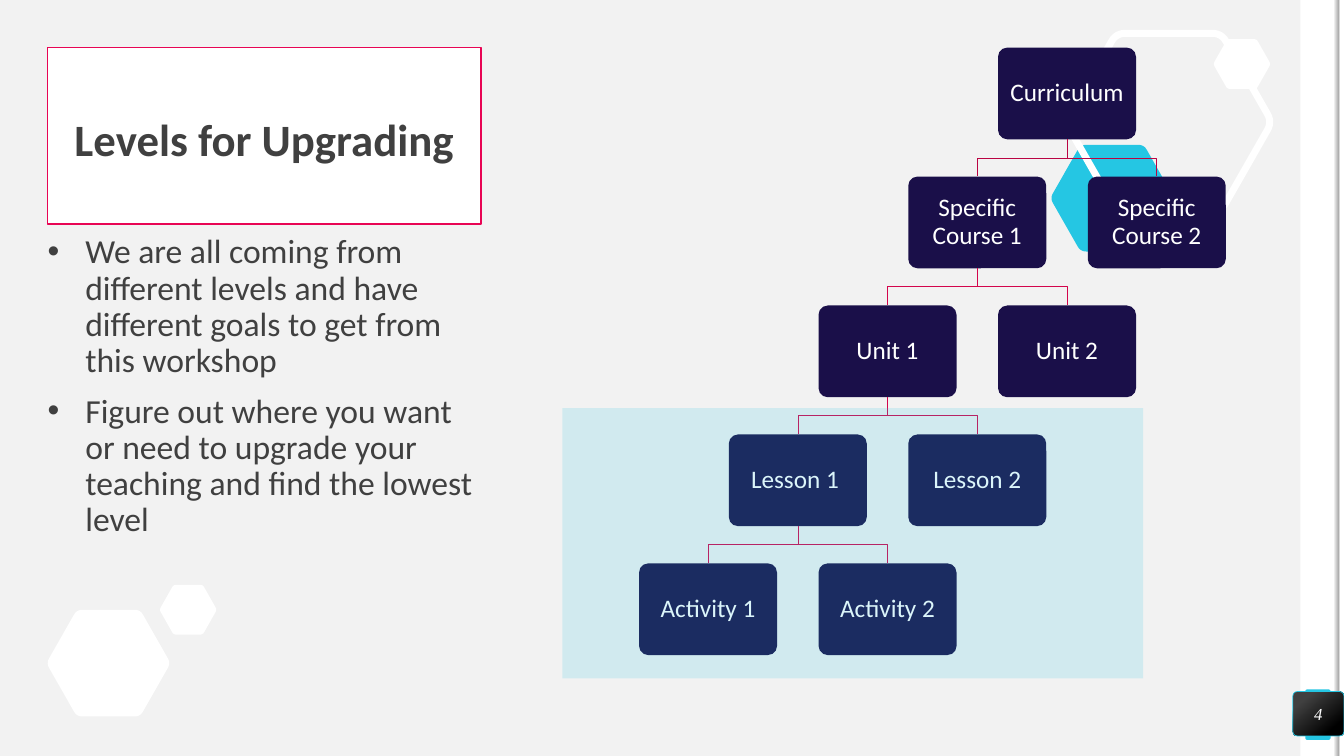
"""Build the "Levels for Upgrading" slide with its curriculum tree."""
from dataclasses import dataclass
from typing import Any, Optional

from lxml import etree
from pptx import Presentation
from pptx.dml.color import RGBColor
from pptx.enum import shapes, text
from pptx.oxml import ns
from pptx.util import Pt


@dataclass(frozen=True)
class Theme:
    backdrop: str = "F2F2F2"
    white: str = "FFFFFF"
    grey: str = "A6A6A6"
    ink: str = "404040"
    black: str = "000000"
    cyan: str = "25C6E3"
    pink: str = "E80554"
    branch: str = "D3054C"
    root_branch: str = "BA0443"
    navy: str = "1A0F49"
    font: str = "Calibri"
    number_font: str = "Times New Roman"
    title_size: float = 32
    body_size: float = 24
    node_size: float = 18
    number_size: float = 12


@dataclass(frozen=True)
class Box:
    left: float
    top: float
    width: float
    height: float


@dataclass(frozen=True)
class Hexagon:
    box: Box
    fill: Optional[str]


@dataclass(frozen=True)
class Node:
    label: str
    column: int
    row: int
    parent: Optional[int] = None


THEME = Theme()
RECT = shapes.MSO_SHAPE.RECTANGLE
ROUNDED = shapes.MSO_SHAPE.ROUNDED_RECTANGLE
NODE_WIDTH, NODE_HEIGHT = 98.6, 65.5
TREE_LEFT, TREE_TOP = 456.5, 34
COLUMN_STEP, ROW_STEP = 64.1, 92.1
HEXAGONS = [
    Hexagon(Box(34, 435.6, 87, 76.2), THEME.white),
    Hexagon(Box(751, 103.5, 87, 76.2), THEME.cyan),
    Hexagon(Box(762.6, 23.8, 144.6, 126.7), None),
    Hexagon(Box(114.3, 417.8, 40.2, 35.5), THEME.white),
    Hexagon(Box(867, 28, 40.2, 35.5), THEME.white),
]
NODES = [
    Node("Curriculum", 4, 0),
    Node("Specific Course 1", 3, 1, 0),
    Node("Specific Course 2", 5, 1, 0),
    Node("Unit 1", 2, 2, 1),
    Node("Unit 2", 4, 2, 1),
    Node("Lesson 1 ", 1, 3, 3),
    Node("Lesson 2", 3, 3, 3),
    Node("Activity 1", 0, 4, 5),
    Node("Activity 2", 2, 4, 5),
]
GOALS = [
    "We are all coming from different levels and have different goals to get from this workshop",
    "Figure out where you want or need to upgrade your teaching and find the lowest level",
]


def color(code: str) -> RGBColor:
    return RGBColor.from_string(code)


def paint(shape: Any, fill: Optional[str], line: Optional[str] = None, weight: float = 1) -> None:
    shape.shadow.inherit = False
    if fill:
        shape.fill.solid()
        shape.fill.fore_color.rgb = color(fill)
    else:
        shape.fill.background()
    if line:
        shape.line.color.rgb = color(line)
        shape.line.width = Pt(weight)
    else:
        shape.line.fill.background()


def add_block(page: Any, kind: Any, box: Box, fill: str, line: Optional[str] = None,
              weight: float = 1, corner: float = 0.1) -> Any:
    shape = page.shapes.add_shape(kind, Pt(box.left), Pt(box.top), Pt(box.width), Pt(box.height))
    if kind == ROUNDED:
        shape.adjustments[0] = corner
    paint(shape, fill, line, weight)
    return shape


def apply_gradient(shape: Any, stops: list[tuple[float, str]], angle: float) -> None:
    shape.fill.gradient()
    shape.fill.gradient_angle = angle
    for stop, (position, code) in zip(shape.fill.gradient_stops, stops):
        stop.position = position
        stop.color.rgb = color(code)


def write(shape: Any, words: str, size: float, code: str, font: str = THEME.font,
          align: Any = text.PP_ALIGN.CENTER, anchor: Any = text.MSO_ANCHOR.MIDDLE,
          margin: float = 0, bullet: bool = False, spacing: float = 0.9) -> Any:
    frame = shape.text_frame
    frame.text = words
    frame.word_wrap = True
    frame.auto_size = text.MSO_AUTO_SIZE.NONE
    frame.vertical_anchor = anchor
    frame.margin_left = frame.margin_right = Pt(margin)
    frame.margin_top = frame.margin_bottom = Pt(margin)
    for index, para in enumerate(frame.paragraphs):
        para.alignment = align
        para.line_spacing = spacing
        para.space_before = Pt(10 if index else 0)
        if bullet:
            props = para._p.get_or_add_pPr()
            props.set("marL", str(Pt(27)))
            props.set("indent", str(Pt(-27)))
            etree.SubElement(props, ns.qn("a:buFont"), typeface="Arial")
            etree.SubElement(props, ns.qn("a:buChar"), char="•")
        for span in para.runs:
            span.font.name = font
            span.font.size = Pt(size)
            span.font.color.rgb = color(code)
    return frame


def add_outline(page: Any, points: list[tuple[float, float]], closed: bool) -> Any:
    corners = [(Pt(x), Pt(y)) for x, y in points]
    builder = page.shapes.build_freeform(*corners[0])
    builder.add_line_segments(corners[1:], close=closed)
    return builder.convert_to_shape()


def add_hexagon(page: Any, hexagon: Hexagon) -> None:
    corners = [(0.24, 0), (0.76, 0), (1.01, 0.5), (0.76, 1), (0.24, 1), (-0.01, 0.5)]
    cut, steps = 0.09, 6
    box, points = hexagon.box, []
    for index, (x, y) in enumerate(corners):
        before, after = corners[index - 1], corners[(index + 1) % 6]
        for step in range(steps + 1):
            t = step / steps
            back, ahead = cut * (1 - t) ** 2, cut * t ** 2
            across = x + back * (before[0] - x) + ahead * (after[0] - x)
            down = y + back * (before[1] - y) + ahead * (after[1] - y)
            points.append((box.left + box.width * across, box.top + box.height * down))
    shape = add_outline(page, points, True)
    paint(shape, hexagon.fill, None if hexagon.fill else THEME.white, 5)


def node_box(node: Node) -> Box:
    return Box(TREE_LEFT + COLUMN_STEP * node.column, TREE_TOP + ROW_STEP * node.row,
               NODE_WIDTH, NODE_HEIGHT)


def add_branch(page: Any, parent: Node, child: Node) -> None:
    upper, lower = node_box(parent), node_box(child)
    start, end = upper.left + NODE_WIDTH / 2, lower.left + NODE_WIDTH / 2
    bottom = upper.top + NODE_HEIGHT
    middle = (bottom + lower.top) / 2
    elbow = [(start, bottom), (start, middle), (end, middle), (end, lower.top)]
    paint(add_outline(page, elbow, False), None,
          THEME.branch if parent.row else THEME.root_branch, 0.5)


def add_edge(page: Any) -> None:
    add_block(page, RECT, Box(928.8, 0, 28.1, 540), THEME.white)
    add_block(page, ROUNDED, Box(932.4, 492.5, 18, 36), THEME.cyan, corner=0.07)
    add_block(page, RECT, Box(956.5, 0, 3.5, 540), THEME.white)
    shade = add_block(page, RECT, Box(953, 0, 3.5, 540), THEME.grey)
    apply_gradient(shade, [(0, THEME.backdrop), (1, THEME.grey)], 0)


def main() -> None:
    deck = Presentation()
    deck.slide_width, deck.slide_height = Pt(960), Pt(540)
    page = deck.slides.add_slide(deck.slide_layouts[5])
    page.background.fill.solid()
    page.background.fill.fore_color.rgb = color(THEME.backdrop)
    add_edge(page)
    for hexagon in HEXAGONS:
        add_hexagon(page, hexagon)

    title = page.shapes.title
    title.left, title.top, title.width, title.height = Pt(34), Pt(34), Pt(309.6), Pt(126)
    paint(title, THEME.white, THEME.pink)
    frame = write(title, "Levels for Upgrading", THEME.title_size, THEME.ink,
                  anchor=text.MSO_ANCHOR.BOTTOM)
    frame.margin_bottom = Pt(41)
    frame.paragraphs[0].runs[0].font.bold = True

    badge = add_block(page, ROUNDED, Box(923.5, 494, 36.5, 31.7), THEME.black, THEME.cyan, 0.5)
    apply_gradient(badge, [(0.2, THEME.ink), (0.82, THEME.black)], 310)
    frame = write(badge, "4", THEME.number_size, THEME.white, THEME.number_font, spacing=1.0)
    frame.paragraphs[0].runs[0].font.italic = True

    goals = page.shapes.add_textbox(Pt(34), Pt(167.8), Pt(309.6), Pt(300))
    write(goals, "\n".join(GOALS), THEME.body_size, THEME.ink, align=text.PP_ALIGN.LEFT,
          anchor=text.MSO_ANCHOR.TOP, bullet=True)

    for node in NODES:
        if node.parent is not None:
            add_branch(page, NODES[node.parent], node)
        block = add_block(page, ROUNDED, node_box(node), THEME.navy)
        write(block, node.label, THEME.node_size, THEME.white, margin=6.7)

    focus = add_block(page, RECT, Box(401.8, 291.6, 414.7, 193), THEME.cyan)
    tint = focus.element.spPr.xpath("./a:solidFill/a:srgbClr")[0]
    etree.SubElement(tint, ns.qn("a:alpha"), val="16000")
    deck.save("out.pptx")


if __name__ == "__main__":
    main()
